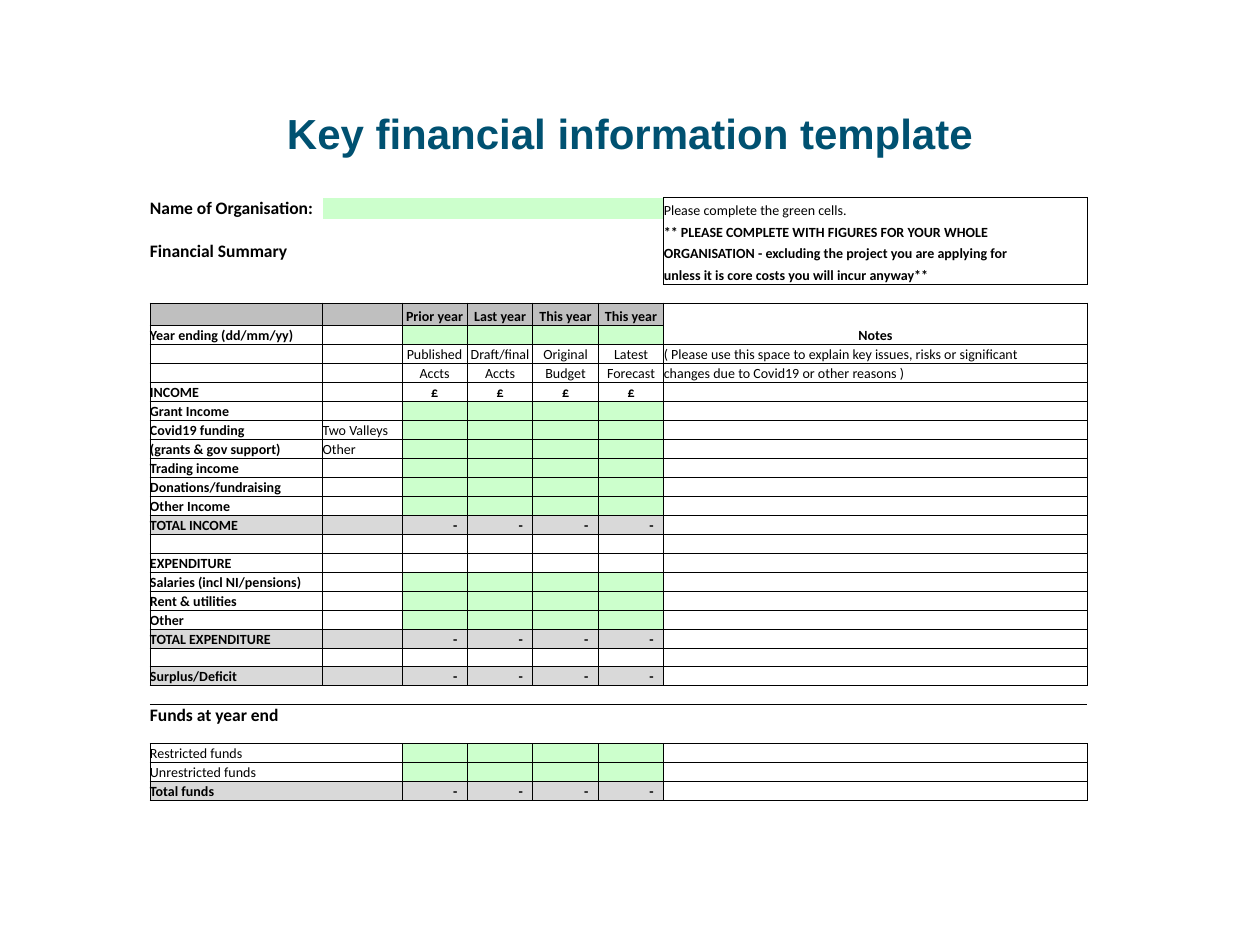
from dataclasses import dataclass

from lxml.etree import SubElement
from pptx import Presentation
from pptx.dml.color import RGBColor
from pptx.enum.text import MSO_ANCHOR as Anchor, PP_ALIGN as Align
from pptx.oxml.ns import qn
from pptx.util import Inches, Pt

BLACK = RGBColor(0x00, 0x00, 0x00)
TEAL = RGBColor(0x00, 0x51, 0x71)
GREEN = RGBColor(0xCC, 0xFF, 0xCC)
GREY = RGBColor(0xD9, 0xD9, 0xD9)
DARK = RGBColor(0xBF, 0xBF, 0xBF)

WIDTHS = [1.37, 0.63] + [0.52] * 4 + [3.36]
HEIGHT = 4.79
NOTE = 6
ALL = tuple(range(7))
BLANK = ("",) * 4
DASHES = ("-",) * 4
NO_STYLE = "{2D5ABB26-0587-4C30-8999-92F81FD0307C}"

# Ruled sides of the label, type, year and note cells
GRID = ("LTRB",) * 4
TOP = ("LTR",) * 4
END = ("LRB",) * 4
OPEN = ("",) * 4
ABOVE = ("B",) * 4
BELOW = ("T",) * 4
FUND = ("LTB", "TRB", "LTRB", "LTRB")


@dataclass
class Row:
    label: str = ""
    kind: str = ""
    years: tuple = BLANK
    note: str = ""
    sides: tuple = GRID
    fills: tuple = (None, None, None)  # label, type, years
    height: float = 0.15
    size: int = 8  # of the label
    plain: tuple = (1,)  # columns that are not bold


def entry(label, kind="", **rest):
    return Row(label, kind, fills=(None, None, GREEN), **rest)


def total(label, **rest):
    return Row(label, years=DASHES, fills=(GREY,) * 3, **rest)


def intro(note, label="", top="", end="", **rest):
    """Row above the grid, with one line of the boxed guidance."""
    sides = ("", "", "", "LR" + top + end)
    return Row(label, note=note, sides=sides, height=0.17, size=10, **rest)


ROWS = [
    intro("Please complete the green cells.", "Name of Organisation:", top="T",
          fills=(None, GREEN, GREEN), plain=(NOTE,)),
    intro("** PLEASE COMPLETE WITH FIGURES FOR YOUR WHOLE"),
    intro("ORGANISATION - excluding the project you are applying for",
          "Financial Summary"),
    intro("unless it is core costs you will incur anyway**", end="B"),
    Row(sides=("B", "B", "B", "TB")),
    Row(years=("Prior year", "Last year", "This year", "This year"),
        note="Notes", fills=(DARK,) * 3, height=0.18),
    entry("Year ending (dd/mm/yy)"),
    Row(years=("Published", "Draft/final", "Original", "Latest"), plain=ALL,
        note="( Please use this space to explain key issues, risks or significant",
        sides=TOP),
    Row(years=("Accts", "Accts", "Budget", "Forecast"), plain=ALL,
        note="changes due to Covid19 or other reasons )", sides=END),
    Row("INCOME", years=("£",) * 4),
    entry("Grant Income"),
    entry("Covid19 funding", "Two Valleys", sides=TOP[:1] + GRID[1:]),
    entry("(grants & gov support)", "Other", sides=END[:1] + GRID[1:]),
    entry("Trading income"),
    entry("Donations/fundraising"),
    entry("Other Income"),
    total("TOTAL INCOME"),
    Row(),
    Row("EXPENDITURE"),
    entry("Salaries (incl NI/pensions)"),
    entry("Rent & utilities"),
    entry("Other"),
    total("TOTAL EXPENDITURE"),
    Row(height=0.14),
    total("Surplus/Deficit"),
    Row(sides=BELOW),
    Row("Funds at year end", sides=OPEN, height=0.17, size=10),
    Row(sides=ABOVE, height=0.14),
    entry("Restricted funds", sides=FUND, plain=ALL),
    entry("Unrestricted funds", sides=FUND, plain=ALL),
    total("Total funds", sides=FUND),
]


def rule(cell, sides):
    """Draw thin black lines on the given sides (letters of LRTB)."""
    props = cell._tc.get_or_add_tcPr()
    for side in "LRTB":
        if side in sides:
            line = SubElement(props, qn("a:ln" + side), w=str(Pt(0.5)))
            fill = SubElement(line, qn("a:solidFill"))
            SubElement(fill, qn("a:srgbClr"), val=str(BLACK))


def paint(cell, color):
    if color is None:
        cell.fill.background()
    else:
        cell.fill.solid()
        cell.fill.fore_color.rgb = color


def style(font, name, size, bold, color):
    font.name, font.size, font.bold = name, Pt(size), bold
    font.color.rgb = color


def write(cell, text, size, bold, align):
    cell.margin_left = cell.margin_top = cell.margin_bottom = 0
    cell.margin_right = Inches(0.08 if align == Align.RIGHT else 0)
    cell.vertical_anchor = Anchor.BOTTOM
    para = cell.text_frame.paragraphs[0]
    para.alignment = align
    if text:
        run = para.add_run()
        run.text = text
        style(run.font, "Calibri", size, bold, BLACK)
    else:
        # An empty cell needs a small font so that its row stays low
        SubElement(para._p, qn("a:endParaRPr"), sz=str(size * 100))


def align_of(col, text):
    if text == "-":
        return Align.RIGHT
    if col in range(2, NOTE) or text == "Notes":
        return Align.CENTER
    return Align.LEFT


def fill_row(cells, row):
    texts = (row.label, row.kind, *row.years, row.note)
    label, kind, year, note = row.sides
    sides = [label, kind] + [year] * 4 + [note]
    if "L" in note:
        sides[NOTE - 1] += "R"
    colors = [*row.fills[:2]] + [row.fills[2]] * 4 + [None]
    for col, cell in enumerate(cells):
        text = texts[col]
        size = row.size if col == 0 and text else 8
        write(cell, text, size, col not in row.plain, align_of(col, text))
        rule(cell, sides[col])
        paint(cell, colors[col])


def add_grid(slide):
    frame = slide.shapes.add_table(
        len(ROWS), len(WIDTHS), Inches(1.19), Inches(1.57),
        Inches(sum(WIDTHS)), Inches(HEIGHT))
    table = frame.table
    table.first_row = table.horz_banding = False
    table._tbl.tblPr.find(qn("a:tableStyleId")).text = NO_STYLE
    for col, width in zip(table.columns, WIDTHS):
        col.width = Inches(width)
    scale = HEIGHT / sum(row.height for row in ROWS)
    for line, row in zip(table.rows, ROWS):
        line.height = Inches(row.height * scale)
        fill_row(line.cells, row)
    head = next(i for i, row in enumerate(ROWS) if row.note == "Notes")
    table.cell(head, NOTE).merge(table.cell(head + 1, NOTE))


def add_title(slide, text):
    title = slide.shapes.title
    title.left, title.top = Inches(0.69), Inches(0.56)
    title.width, title.height = Inches(8.62), Inches(1.03)
    title.text_frame.vertical_anchor = Anchor.MIDDLE
    para = title.text_frame.paragraphs[0]
    para.alignment, para.line_spacing = Align.CENTER, 0.9
    run = para.add_run()
    run.text = text
    style(run.font, "Arial", 24, True, TEAL)


def main():
    deck = Presentation()
    deck.slide_width, deck.slide_height = Inches(10), Inches(7.5)
    slide = deck.slides.add_slide(deck.slide_layouts[5])
    add_title(slide, "Key financial information template")
    add_grid(slide)
    deck.save("out.pptx")


if __name__ == "__main__":
    main()
